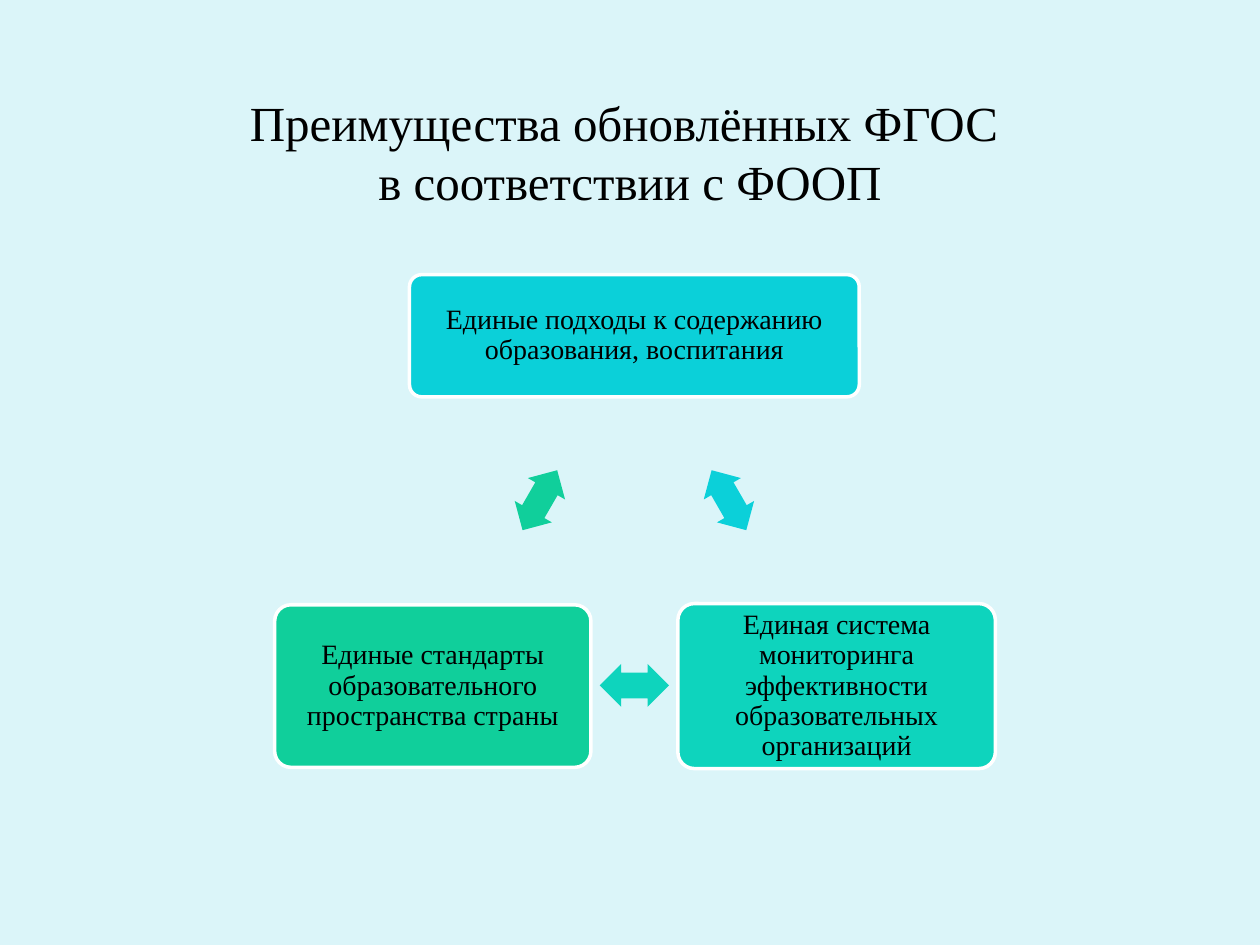
from pptx import Presentation
from pptx.dml.color import RGBColor
from pptx.enum.shapes import MSO_SHAPE
from pptx.enum.text import MSO_ANCHOR, PP_ALIGN
from pptx.util import Inches, Pt


def rgb(value):
    return RGBColor.from_string(value)


class Deck:
    """Builds styled elements on the current slide."""

    font = "Times New Roman"
    ink = "000000"
    edge = "FFFFFF"

    def __init__(self, prs, background):
        self.slide = prs.slides.add_slide(prs.slide_layouts[5])
        fill = self.slide.background.fill
        fill.solid()
        fill.fore_color.rgb = rgb(background)

    def set_text(self, tf, text, size):
        tf.word_wrap = True
        tf.vertical_anchor = MSO_ANCHOR.MIDDLE
        p = tf.paragraphs[0]
        p.text = text
        p.alignment = PP_ALIGN.CENTER
        for r in p.runs:
            r.font.name = self.font
            r.font.size = Pt(size)
            r.font.color.rgb = rgb(self.ink)
        return p

    def title(self, text, x, y, w, h):
        sp = self.slide.shapes.title
        sp.left, sp.top, sp.width, sp.height = map(Inches, (x, y, w, h))
        self.set_text(sp.text_frame, text, 28)

    def shape(self, kind, x, y, w, h, color):
        sp = self.slide.shapes.add_shape(kind, *map(Inches, (x, y, w, h)))
        sp.shadow.inherit = False
        sp.fill.solid()
        sp.fill.fore_color.rgb = rgb(color)
        return sp

    def box(self, text, x, y, w, h, color):
        sp = self.shape(MSO_SHAPE.ROUNDED_RECTANGLE, x, y, w, h, color)
        sp.adjustments[0] = 0.1
        sp.line.color.rgb = rgb(self.edge)
        sp.line.width = Pt(2)
        tf = sp.text_frame
        tf.margin_left = tf.margin_right = Inches(0.07)
        tf.margin_top = tf.margin_bottom = Inches(0.07)
        self.set_text(tf, text, 16).line_spacing = 0.9

    def arrow(self, x, y, angle, color):
        sp = self.shape(MSO_SHAPE.LEFT_RIGHT_ARROW, x, y, 0.55, 0.34, color)
        sp.adjustments[0] = 0.6
        sp.adjustments[1] = 0.5
        sp.line.fill.background()
        sp.rotation = angle


def main():
    prs = Presentation()
    prs.slide_width, prs.slide_height = Inches(10), Inches(7.5)
    deck = Deck(prs, "DBF5F9")
    deck.title("Преимущества обновлённых ФГОС \vв соответствии с ФООП", 0.5, 0.58, 9, 1.25)
    advantages = [
        ("Единые подходы к содержанию образования, воспитания",
         (3.25, 2.18, 3.57, 0.97), (5.51, 3.8, 60), "0BD0D9"),
        ("Единая система мониторинга эффективности образовательных организаций",
         (5.38, 4.79, 2.52, 1.31), (4.76, 5.27, 180), "0ED4BD"),
        ("Единые стандарты образовательного пространства страны",
         (2.18, 4.8, 2.51, 1.29), (4.01, 3.8, 300), "10CF9B"),
    ]
    for text, frame, arrow, color in advantages:
        deck.box(text, *frame, color)
        deck.arrow(*arrow, color)
    prs.save("out.pptx")


if __name__ == "__main__":
    main()
